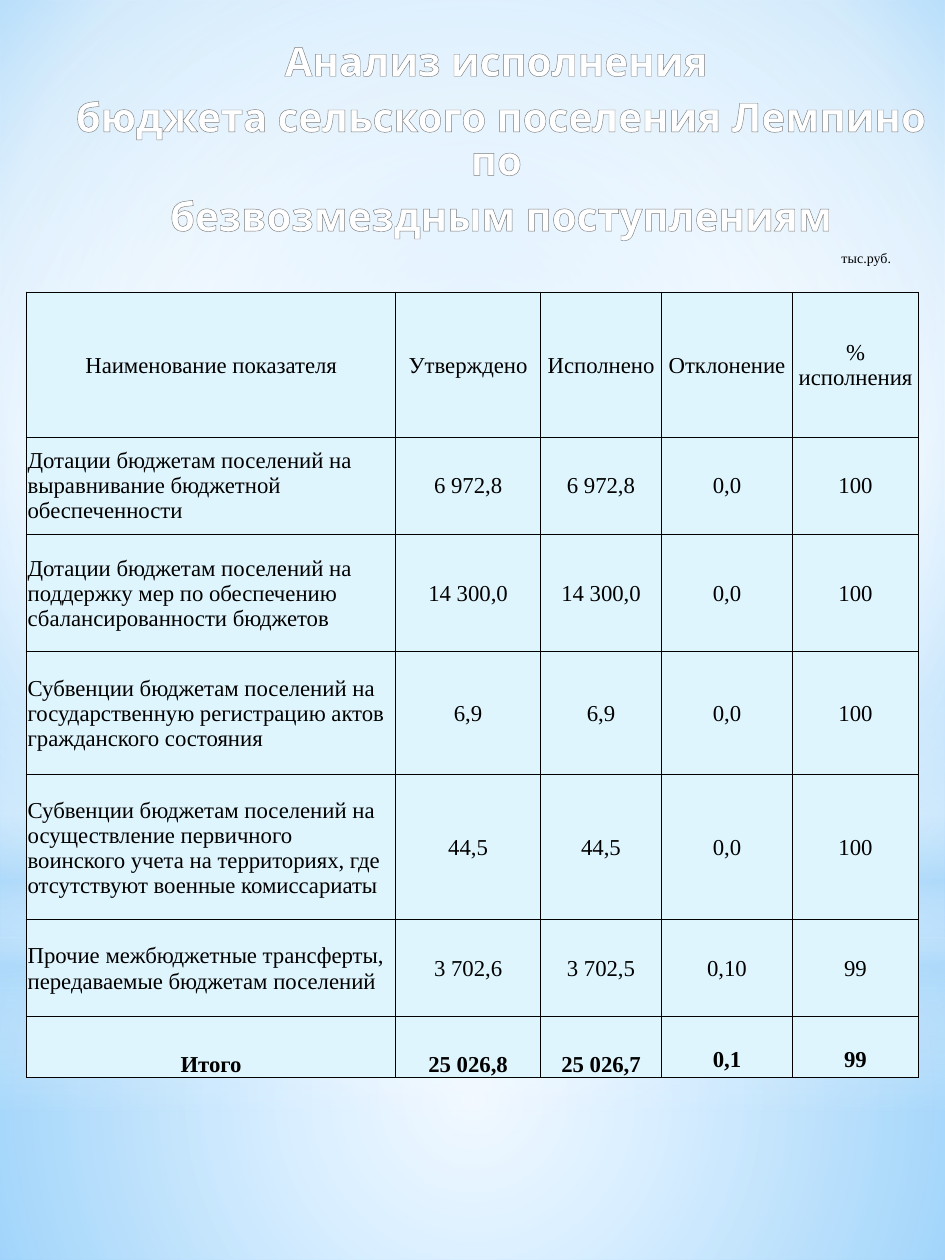
from dataclasses import dataclass

from lxml import etree
from pptx import Presentation
from pptx.dml.color import RGBColor
from pptx.enum.shapes import MSO_SHAPE
from pptx.enum.text import MSO_ANCHOR, PP_ALIGN
from pptx.oxml.ns import qn
from pptx.util import Inches, Pt

RECTANGLE, OVAL = MSO_SHAPE.RECTANGLE, MSO_SHAPE.OVAL
MIDDLE, BOTTOM = MSO_ANCHOR.MIDDLE, MSO_ANCHOR.BOTTOM
LEFT, CENTER = PP_ALIGN.LEFT, PP_ALIGN.CENTER

COLORS = {
    "white": "FFFFFF", "black": "000000", "haze": "B4DCFA",
    "sky": "9ED5FF", "deep_sky": "5BB9FF", "cell": "DFF5FD",
    "title_shade": "7F7F7F", "title_outline": "7D7D7D",
}
TITLE_FONT, TABLE_FONT = "Karla", "Times New Roman"
THIN, THICK = 0.5, 1


@dataclass
class Stop:
    position: int
    color: str
    opacity: int = 100


@dataclass
class Gradient:
    """A linear gradient when focus is None, else a circular one around focus (l, t, r, b)."""
    stops: list[Stop]
    focus: tuple[int, int, int, int] | None = (50, 50, 50, 50)


@dataclass
class Glow:
    preset: int
    top: float
    height: float
    gradient: Gradient


@dataclass
class BudgetRow:
    height: float
    texts: tuple[str, ...]


BACKGROUND = Gradient(
    [Stop(0, "sky"), Stop(60, "white"), Stop(100, "deep_sky")], (20, 10, 20, 60))
GLOWS = [
    Glow(RECTANGLE, 7.44, 2.56, Gradient(
        [Stop(0, "white", 91), Stop(37, "white", 76), Stop(100, "haze", 79)])),
    Glow(RECTANGLE, 0, 7.44, Gradient(
        [Stop(0, "white", 89), Stop(48, "white", 62), Stop(100, "haze", 79)])),
    Glow(RECTANGLE, 5.49, 3.33, Gradient(
        [Stop(0, "white", 0), Stop(29, "white", 30), Stop(45, "haze", 40),
         Stop(55, "white", 26), Stop(65, "haze", 60), Stop(100, "white", 0)], None)),
    Glow(OVAL, 2.33, 7.44, Gradient([Stop(0, "white"), Stop(56, "white", 0)])),
]
TITLE_FILL = Gradient(
    [Stop(0, "white"), Stop(9, "white"), Stop(50, "title_shade"),
     Stop(79, "white"), Stop(100, "white")], None)
TITLE_LINES = [
    "Анализ исполнения ",
    "бюджета сельского поселения Лемпино по ",
    "безвозмездным поступлениям",
]
COLUMN_WIDTHS = [2.93, 1.15, 0.96, 1.04, 1]
BUDGET_ROWS = [
    BudgetRow(1.15, ("Наименование показателя", "Утверждено", "Исполнено",
                     "Отклонение", "% исполнения")),
    BudgetRow(0.77, ("Дотации бюджетам поселений на выравнивание бюджетной обеспеченности",
                     "6 972,8", "6 972,8", "0,0", "100")),
    BudgetRow(0.93, ("Дотации бюджетам поселений на поддержку мер по обеспечению "
                     "сбалансированности бюджетов",
                     "14 300,0", "14 300,0", "0,0", "100")),
    BudgetRow(0.98, ("Субвенции бюджетам поселений на государственную регистрацию "
                     "актов гражданского состояния",
                     "6,9", "6,9", "0,0", "100")),
    BudgetRow(1.15, ("Субвенции бюджетам поселений на осуществление первичного "
                     "воинского учета на территориях, где отсутствуют военные комиссариаты",
                     "44,5", "44,5", "0,0", "100")),
    BudgetRow(0.77, ("Прочие межбюджетные трансферты, передаваемые бюджетам поселений",
                     "3 702,6", "3 702,5", "0,10", "99")),
    BudgetRow(0.48, ("Итого", "25 026,8", "25 026,7", "0,1", "99")),
]


def add_child(parent, tag: str, **attributes):
    values = {name: str(value) for name, value in attributes.items()}
    return etree.SubElement(parent, qn(tag), values)


def gradient_xml(gradient: Gradient):
    fill = etree.Element(qn("a:gradFill"), {"rotWithShape": "1"})
    stops = add_child(fill, "a:gsLst")
    for stop in gradient.stops:
        color = add_child(add_child(stops, "a:gs", pos=stop.position * 1000),
                          "a:srgbClr", val=COLORS[stop.color])
        if stop.opacity < 100:
            add_child(color, "a:alpha", val=stop.opacity * 1000)
    if gradient.focus is None:
        add_child(fill, "a:lin", ang=90 * 60000, scaled=0)
    else:
        sides = {side: value * 1000 for side, value in zip("ltrb", gradient.focus)}
        add_child(add_child(fill, "a:path", path="circle"), "a:fillToRect", **sides)
    return fill


def line_xml(tag: str, color: str, width: float):
    line = etree.Element(qn(tag), {"w": str(int(Pt(width)))})
    add_child(add_child(line, "a:solidFill"), "a:srgbClr", val=COLORS[color])
    return line


def replace_solid_fill(properties, gradient: Gradient) -> None:
    properties.replace(properties.find(qn("a:solidFill")), gradient_xml(gradient))


def format_font(font, name: str, size: float, bold: bool = False) -> None:
    font.name, font.size, font.bold = name, Pt(size), bold


def set_black(font) -> None:
    font.color.rgb = RGBColor.from_string(COLORS["black"])


def add_glow(slide, glow: Glow) -> None:
    shape = slide.shapes.add_shape(
        glow.preset, Inches(0), Inches(glow.top), Inches(7.5), Inches(glow.height))
    shape.shadow.inherit = False
    shape.line.fill.background()
    shape.fill.solid()
    replace_solid_fill(shape.element.spPr, glow.gradient)


def add_title(slide) -> None:
    title = slide.shapes.add_textbox(Inches(0.41), Inches(0.28), Inches(7.09), Inches(1.81))
    frame = title.text_frame
    frame.word_wrap = True
    frame.text = "\n".join(TITLE_LINES)
    for paragraph in frame.paragraphs:
        paragraph.alignment = CENTER
        paragraph.line_spacing = 0.9
        paragraph.space_before, paragraph.space_after = Pt(4), Pt(3)
        paragraph._p.get_or_add_pPr().set("marL", str(int(Inches(0.05))))
        for run in paragraph.runs:
            format_font(run.font, TITLE_FONT, 23, True)
            properties = run._r.get_or_add_rPr()
            properties.insert(0, line_xml("a:ln", "title_outline", 0.83))
            properties.insert(1, gradient_xml(TITLE_FILL))


def add_unit_label(slide) -> None:
    label = slide.shapes.add_textbox(Inches(6.58), Inches(1.93), Inches(0.79), Inches(0.24))
    frame = label.text_frame
    frame.word_wrap = True
    frame.text = "тыс.руб."
    font = frame.paragraphs[0].runs[0].font
    format_font(font, TABLE_FONT, 8)
    set_black(font)


def fill_cell(cell, text: str, row: int, column: int) -> None:
    is_header, is_total = row == 0, row == len(BUDGET_ROWS) - 1
    cell.text_frame.text = text
    cell.margin_left = cell.margin_right = cell.margin_top = Inches(0.01)
    cell.margin_bottom = Inches(0.04 if is_total and column > 2 else 0)
    cell.vertical_anchor = BOTTOM if is_total else MIDDLE
    cell.fill.solid()
    cell.fill.fore_color.rgb = RGBColor.from_string(COLORS["cell"])
    paragraph = cell.text_frame.paragraphs[0]
    paragraph.alignment = CENTER if is_header or is_total or column else LEFT
    font = paragraph.runs[0].font
    format_font(font, TABLE_FONT, 13, is_total)
    set_black(font)
    borders = {
        "a:lnL": THICK if column == 0 and not is_total else THIN,
        "a:lnR": THIN,
        "a:lnT": THICK if is_header and column < 3 else THIN,
        "a:lnB": THIN,
    }
    for index, (tag, width) in enumerate(borders.items()):
        cell._tc.get_or_add_tcPr().insert(index, line_xml(tag, "black", width))


def add_budget_table(slide) -> None:
    table = slide.shapes.add_table(
        len(BUDGET_ROWS), len(COLUMN_WIDTHS),
        Inches(0.21), Inches(2.32), Inches(7.09), Inches(6.22)).table
    table.first_row = table.horz_banding = False
    for column, width in zip(table.columns, COLUMN_WIDTHS):
        column.width = Inches(width)
    for row, budget_row in enumerate(BUDGET_ROWS):
        table.rows[row].height = Inches(budget_row.height)
        for column, text in enumerate(budget_row.texts):
            fill_cell(table.cell(row, column), text, row, column)


def main() -> None:
    presentation = Presentation()
    presentation.slide_width, presentation.slide_height = Inches(7.5), Inches(10)
    slide = presentation.slides.add_slide(presentation.slide_layouts[6])
    slide.background.fill.solid()
    replace_solid_fill(slide.element.find(".//" + qn("p:bgPr")), BACKGROUND)
    for glow in GLOWS:
        add_glow(slide, glow)
    add_title(slide)
    add_budget_table(slide)
    add_unit_label(slide)
    presentation.save("out.pptx")


if __name__ == "__main__":
    main()
